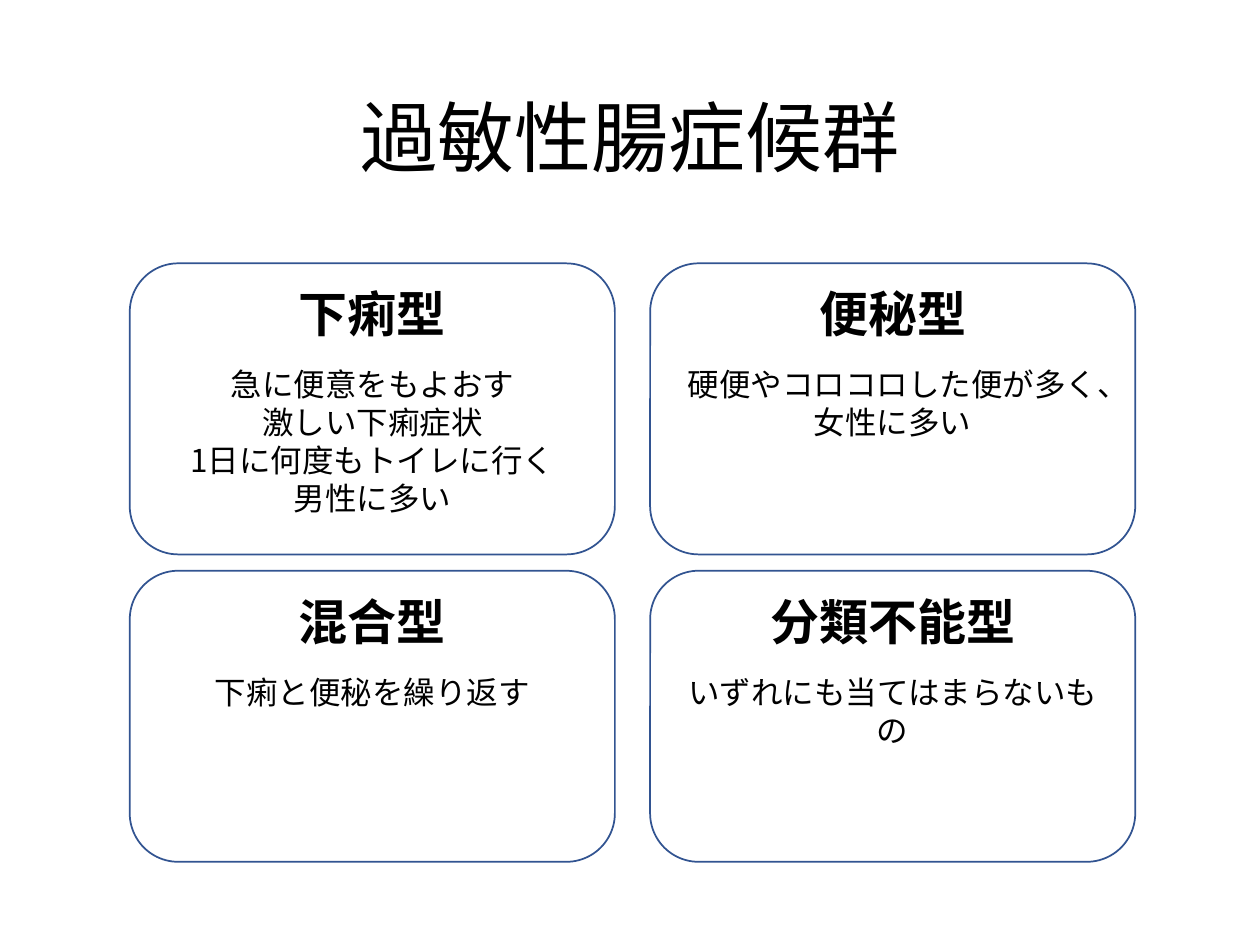
from lxml.etree import SubElement
from pptx import Presentation
from pptx.dml.color import RGBColor
from pptx.enum.shapes import MSO_SHAPE as Shape
from pptx.enum.text import MSO_ANCHOR as Anchor, PP_ALIGN as Align
from pptx.oxml.ns import qn
from pptx.util import Inches, Pt

FONT = "Noto Sans CJK JP"
BLACK = RGBColor(0x00, 0x00, 0x00)
BLUE = RGBColor(0x32, 0x54, 0x91)

TITLE_FORMAT = {"size": Pt(44), "bold": False}
HEADING_FORMAT = {"size": Pt(28), "bold": True}
BODY_FORMAT = {"size": Pt(18), "bold": False}

LEFT, TOP = 1.03, 2.09
CARD_WIDTH, CARD_HEIGHT = 3.85, 2.31
COLUMN_STEP, ROW_STEP = 4.13, 2.44
COLUMNS = 2

TYPES = [
    ("下痢型", ["急に便意をもよおす", "激しい下痢症状", "1日に何度もトイレに行く", "男性に多い"]),
    ("便秘型", ["硬便やコロコロした便が多く、女性に多い"]),
    ("混合型", ["下痢と便秘を繰り返す"]),
    ("分類不能型", ["いずれにも当てはまらないもの"]),
]


def write_paragraph(paragraph, text, font_format):
    """Fill a centred paragraph, naming the font for Latin and East Asian text."""
    paragraph.alignment = Align.CENTER
    run = paragraph.add_run()
    run.text = text
    for name, value in {"name": FONT, **font_format}.items():
        setattr(run.font, name, value)
    run.font.color.rgb = BLACK
    SubElement(run.font._element, qn("a:ea"), typeface=FONT)


def add_title(slide, text):
    box = slide.shapes.add_textbox(Inches(0.69), Inches(0.4), Inches(8.62), Inches(1.45))
    frame = box.text_frame
    frame.word_wrap = True
    frame.vertical_anchor = Anchor.MIDDLE
    paragraph = frame.paragraphs[0]
    paragraph.line_spacing = 0.9
    write_paragraph(paragraph, text, TITLE_FORMAT)


def add_card(slide, left, top, heading, lines):
    card = slide.shapes.add_shape(
        Shape.FLOWCHART_ALTERNATE_PROCESS,
        Inches(left), Inches(top), Inches(CARD_WIDTH), Inches(CARD_HEIGHT),
    )
    card.shadow.inherit = False
    card.fill.background()
    card.line.color.rgb = BLUE
    card.line.width = Pt(1)
    frame = card.text_frame
    frame.word_wrap = True
    frame.vertical_anchor = Anchor.TOP
    heading_paragraph = frame.paragraphs[0]
    heading_paragraph.space_after = Pt(13)
    write_paragraph(heading_paragraph, heading, HEADING_FORMAT)
    for line in lines:
        write_paragraph(frame.add_paragraph(), line, BODY_FORMAT)


def main():
    presentation = Presentation()
    presentation.slide_width = Inches(10)
    presentation.slide_height = Inches(7.5)
    slide = presentation.slides.add_slide(presentation.slide_layouts[6])
    add_title(slide, "過敏性腸症候群")
    for index, (heading, lines) in enumerate(TYPES):
        row, column = divmod(index, COLUMNS)
        add_card(slide, LEFT + column * COLUMN_STEP, TOP + row * ROW_STEP, heading, lines)
    presentation.save("out.pptx")


if __name__ == "__main__":
    main()
